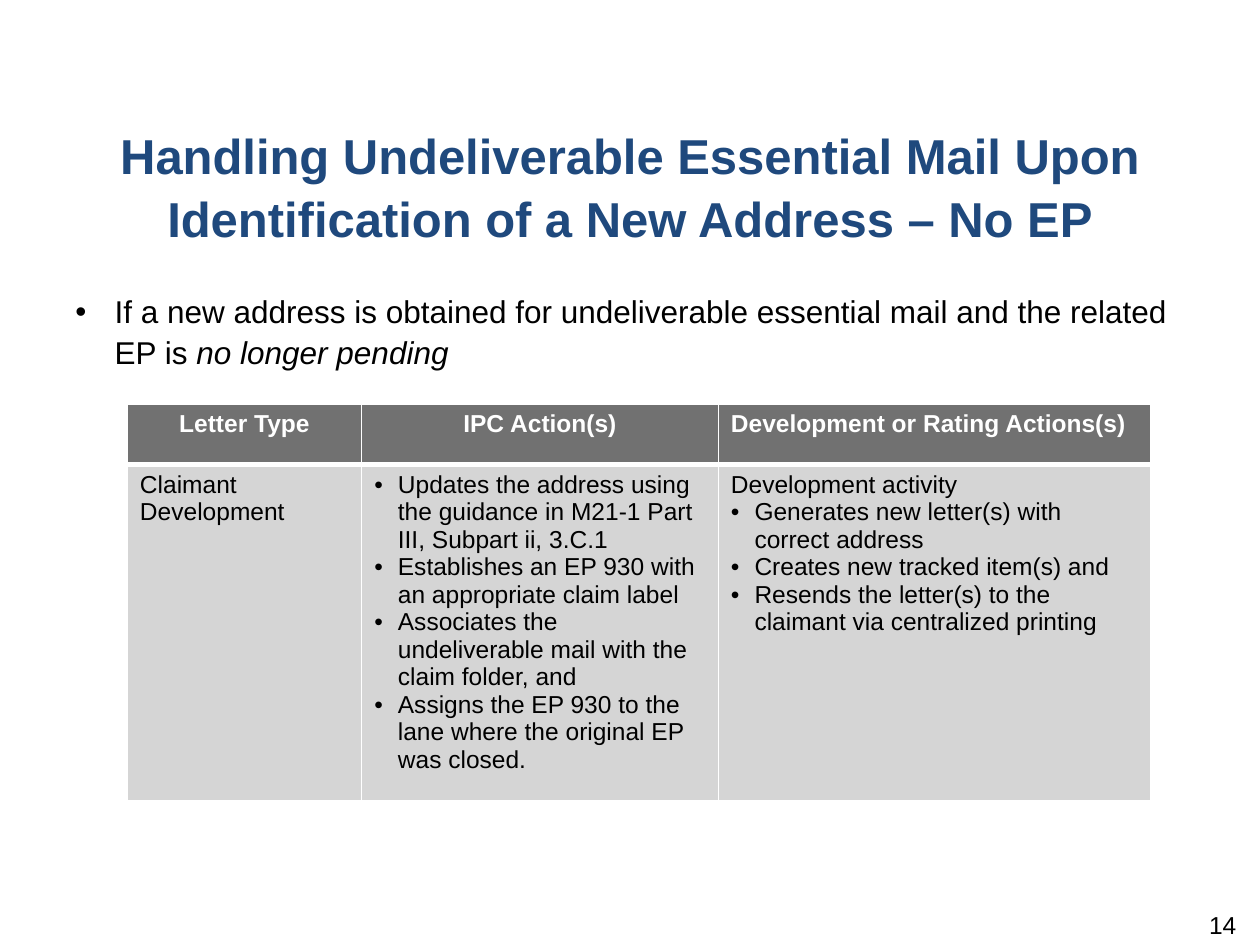
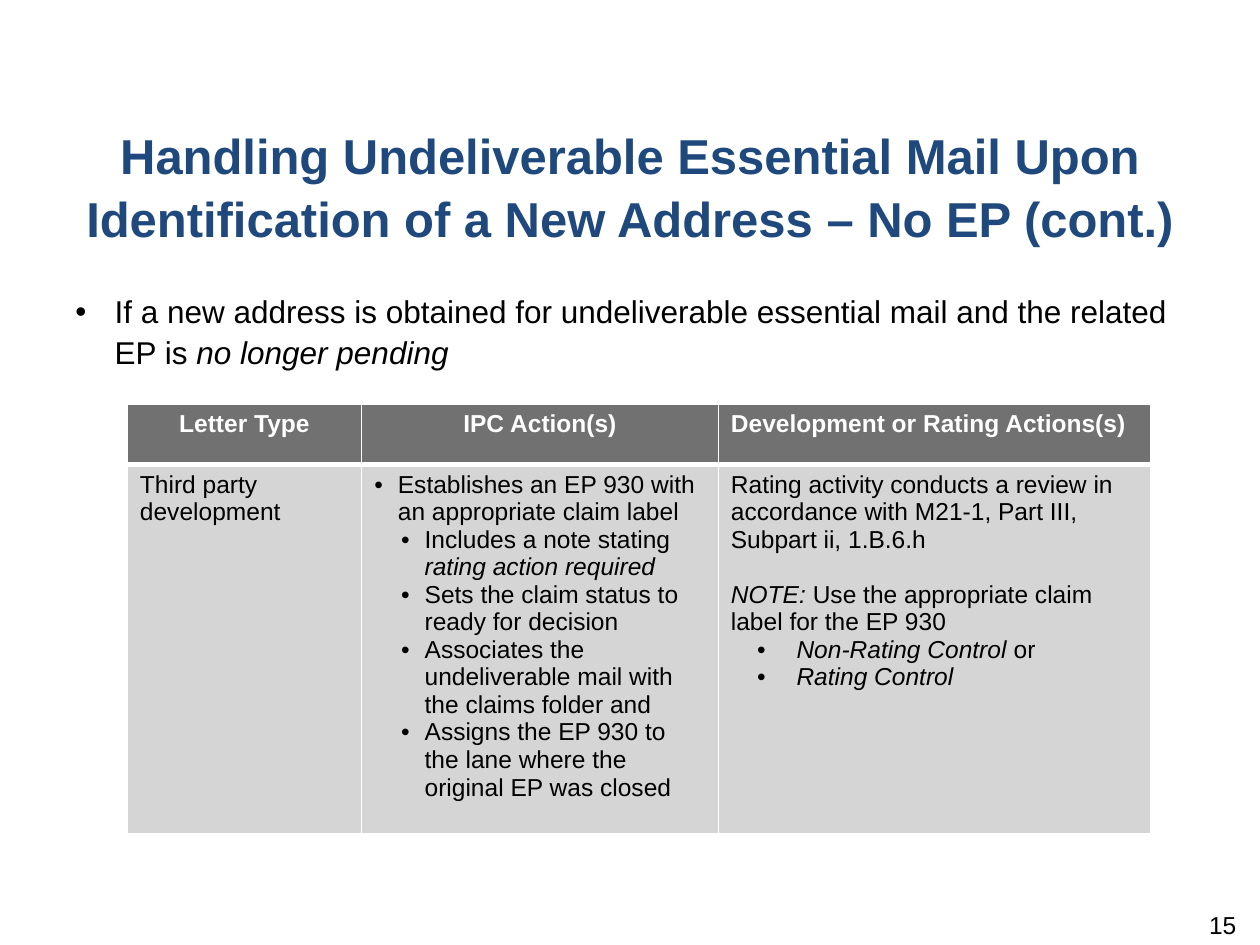
from dataclasses import dataclass
from typing import Any

from lxml import etree
from pptx import Presentation
from pptx.dml.color import RGBColor
from pptx.enum.text import MSO_ANCHOR as Anchor, MSO_AUTO_SIZE as AutoSize, PP_ALIGN as Align
from pptx.oxml.ns import qn
from pptx.util import Pt

TITLE_BLUE = RGBColor(0x1F, 0x49, 0x7D)
BLACK = RGBColor(0, 0, 0)
WHITE = RGBColor(0xFF, 0xFF, 0xFF)
HEADER_GREY = RGBColor(0x71, 0x71, 0x71)
BODY_GREY = RGBColor(0xD5, 0xD5, 0xD5)

FONT = "Arial"
TITLE_FORMAT = {"name": FONT, "size": Pt(28), "bold": True}
INTRO_FORMAT = {"name": FONT, "size": Pt(18), "bold": False}
HEADER_FORMAT = {"name": FONT, "size": Pt(14), "bold": True}
CELL_FORMAT = {"name": FONT, "size": Pt(14), "bold": False}

TITLE = "Handling Undeliverable Essential Mail Upon Identification of a New Address – No EP"
INTRO = "If a new address is obtained for undeliverable essential mail and the related EP is |no longer pending"
COLUMN_WIDTHS = (133.9, 203.8, 247)
HEADER_HEIGHT = 34.5
THIN, THICK = 1, 3


@dataclass(frozen=True)
class Line:
    """Text whose italic parts are set off by vertical bars."""
    text: str
    indent: float = 0
    hanging: float = 0
    level: int = 0
    align: Align = Align.LEFT
    before: float = 0
    after: float = 0
    spacing: float = 1.0


@dataclass(frozen=True)
class LetterSlide:
    title: str
    number: int
    body_height: float
    cells: tuple[tuple[Line, ...], ...]


def item(text: str) -> Line:
    return Line(text, 13.5, 13.5)


def sub_item(text: str, indent: float = 28.8, hanging: float = 13.5) -> Line:
    return Line(text, indent, hanging, level=1)


HEADERS = (
    Line("Letter Type", align=Align.CENTER),
    Line("IPC Action(s)", align=Align.CENTER),
    Line("Development or Rating Actions(s)"),
)

LETTER_SLIDES = (
    LetterSlide(TITLE, 14, 180, (
        (Line("Claimant Development"),),
        (
            item("Updates the address using the guidance in M21-1 Part III, Subpart ii, 3.C.1"),
            item("Establishes an EP 930 with an appropriate claim label"),
            item("Associates the undeliverable mail with the claim folder, and"),
            item("Assigns the EP 930 to the lane where the original EP was closed."),
        ),
        (
            Line("Development activity"),
            item("Generates new letter(s) with correct address"),
            item("Creates new tracked item(s) and"),
            item("Resends the letter(s) to the claimant via centralized printing"),
        ),
    )),
    LetterSlide(f"{TITLE} (cont.)", 15, 211, (
        (Line("Third party development"),),
        (
            item("Establishes an EP 930 with an appropriate claim label"),
            sub_item("Includes a note stating |rating action required"),
            sub_item("Sets the claim status to ready for decision"),
            sub_item("Associates the undeliverable mail with the claims folder and"),
            sub_item("Assigns the EP 930 to the lane where the original EP was closed"),
        ),
        (
            Line("Rating activity conducts a review in accordance with M21-1, Part III, Subpart ii, 1.B.6.h"),
            Line("|NOTE: |Use the appropriate claim label for the EP 930", before=15.75),
            sub_item("|Non-Rating Control| or", 37.5, 22.5),
            sub_item("|Rating Control", 37.5, 22.5),
        ),
    )),
)


def set_values(target: Any, values: dict[str, Any]) -> None:
    for name, value in values.items():
        setattr(target, name, value)


def write_lines(frame: Any, lines: tuple[Line, ...], font: dict[str, Any], color: RGBColor) -> None:
    for index, line in enumerate(lines):
        paragraph = frame.add_paragraph() if index else frame.paragraphs[0]
        if line.hanging:
            properties = paragraph._p.get_or_add_pPr()
            properties.set("marL", str(Pt(line.indent)))
            properties.set("indent", str(-Pt(line.hanging)))
            etree.SubElement(properties, qn("a:buFont"), typeface=FONT)
            etree.SubElement(properties, qn("a:buChar"), char="•")
        set_values(paragraph, {
            "level": line.level,
            "alignment": line.align,
            "space_before": Pt(line.before),
            "space_after": Pt(line.after),
            "line_spacing": line.spacing,
        })
        for part, text in enumerate(line.text.split("|")):
            if text:
                run = paragraph.add_run()
                run.text = text
                set_values(run.font, {**font, "italic": part % 2 == 1})
                run.font.color.rgb = color


def set_border(cell: Any, side: str, width: float) -> None:
    border = etree.SubElement(cell._tc.get_or_add_tcPr(), qn(f"a:ln{side}"), w=str(Pt(width)))
    fill = etree.SubElement(border, qn("a:solidFill"))
    etree.SubElement(fill, qn("a:srgbClr"), val=str(WHITE))


def write_cell(cell: Any, lines: tuple[Line, ...], is_header: bool) -> None:
    widths = {"L": THIN, "R": THIN, "T": THIN if is_header else THICK, "B": THICK if is_header else THIN}
    for side, width in widths.items():
        set_border(cell, side, width)
    cell.fill.solid()
    cell.fill.fore_color.rgb = HEADER_GREY if is_header else BODY_GREY
    font, color = (HEADER_FORMAT, WHITE) if is_header else (CELL_FORMAT, BLACK)
    write_lines(cell.text_frame, lines, font, color)


def add_title(slide: Any, text: str) -> None:
    title = slide.shapes.title
    set_values(title, {"left": Pt(0), "top": Pt(62.6), "width": Pt(720), "height": Pt(85.7)})
    set_values(title.text_frame, {
        "word_wrap": True, "auto_size": AutoSize.NONE, "vertical_anchor": Anchor.MIDDLE,
    })
    write_lines(title.text_frame, (Line(text, align=Align.CENTER, spacing=1.07),), TITLE_FORMAT, TITLE_BLUE)


def add_intro(slide: Any) -> None:
    frame = slide.shapes.add_textbox(Pt(36), Pt(162), Pt(648), Pt(308)).text_frame
    frame.word_wrap = True
    write_lines(frame, (Line(INTRO, 22.5, 22.5, after=6, spacing=1.07),), INTRO_FORMAT, BLACK)


def add_letter_table(slide: Any, letter: LetterSlide) -> None:
    heights = (HEADER_HEIGHT, letter.body_height)
    table = slide.shapes.add_table(
        2, len(COLUMN_WIDTHS), Pt(72.8), Pt(231), Pt(sum(COLUMN_WIDTHS)), Pt(sum(heights))
    ).table
    for column, width in zip(table.columns, COLUMN_WIDTHS):
        column.width = Pt(width)
    for row, height in zip(table.rows, heights):
        row.height = Pt(height)
    for index, (header, lines) in enumerate(zip(HEADERS, letter.cells)):
        write_cell(table.cell(0, index), (header,), True)
        write_cell(table.cell(1, index), lines, False)


def add_page_number(slide: Any, number: int) -> None:
    frame = slide.shapes.add_textbox(Pt(545.8), Pt(519.8), Pt(167.8), Pt(28.8)).text_frame
    set_values(frame, {"word_wrap": True, "margin_top": Pt(0)})
    write_lines(frame, (Line(str(number), align=Align.RIGHT),), CELL_FORMAT, BLACK)


def main() -> None:
    presentation = Presentation()
    set_values(presentation, {"slide_width": Pt(720), "slide_height": Pt(540)})
    for letter in LETTER_SLIDES:
        slide = presentation.slides.add_slide(presentation.slide_layouts[5])
        add_title(slide, letter.title)
        add_page_number(slide, letter.number)
        add_intro(slide)
        add_letter_table(slide, letter)
    presentation.save("out.pptx")


if __name__ == "__main__":
    main()
